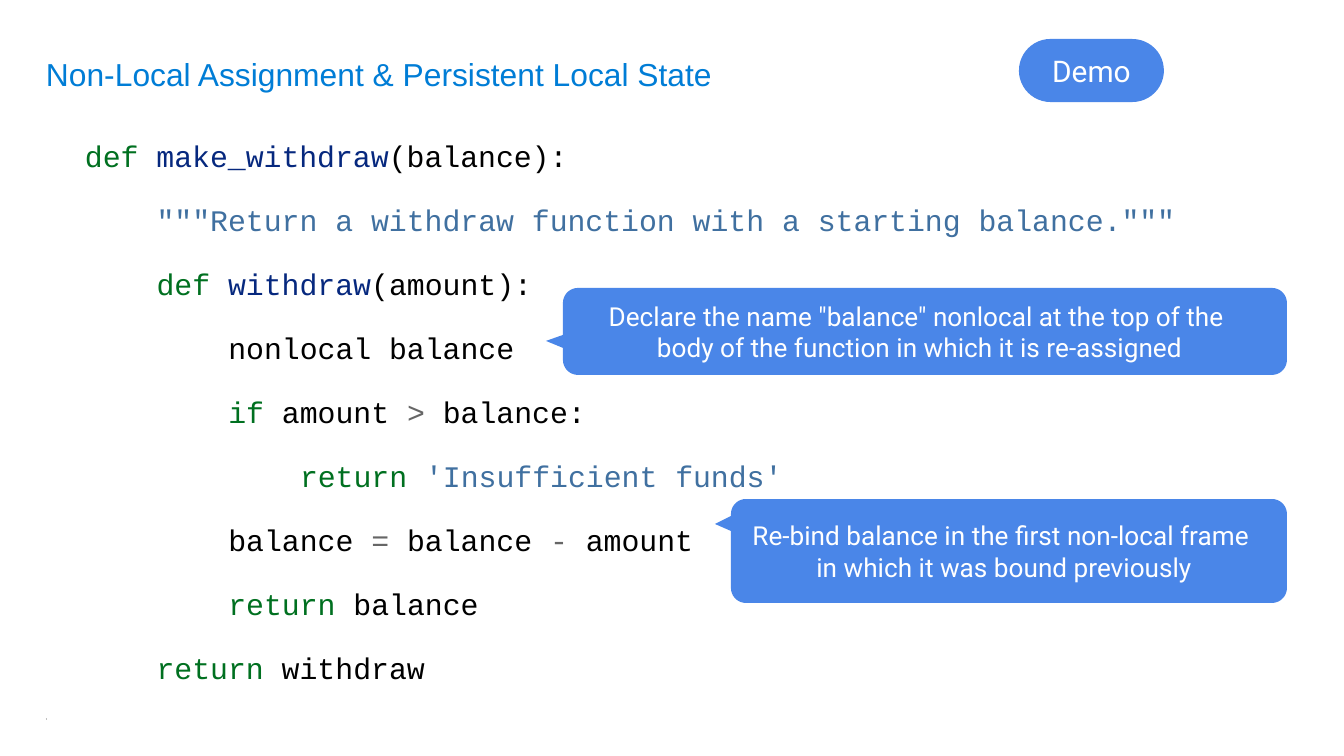
import math
import pptx
import pptx.util
import pptx.dml.color
import pptx.enum.dml
import pptx.enum.shapes
import pptx.enum.text
import pptx.oxml.ns
import lxml.etree

RGB = pptx.dml.color.RGBColor
KIND = pptx.enum.shapes.MSO_SHAPE
ANCHOR = pptx.enum.text.MSO_ANCHOR
CENTER = pptx.enum.text.PP_ALIGN.CENTER
Pt = pptx.util.Pt

# Colours
WHITE = RGB(0xFF, 0xFF, 0xFF)
BLUE = RGB(0x4A, 0x86, 0xE8)
TITLE = RGB(0x00, 0x7D, 0xD6)
GREY = RGB(0xB8, 0xB8, 0xB8)
PLAIN = RGB(0x00, 0x00, 0x00)
KEY = RGB(0x00, 0x70, 0x20)
NAME = RGB(0x06, 0x28, 0x7E)
QUOTE = RGB(0x40, 0x70, 0xA0)
SIGN = RGB(0x66, 0x66, 0x66)

# Content: each code line has an indent level and coloured parts
HEAD = "Non-Local Assignment & Persistent Local State"
CODE = [
    (0, [("def ", KEY), ("make_withdraw", NAME), ("(balance):", PLAIN)]),
    (1, [('"""Return a withdraw function with a starting balance."""', QUOTE)]),
    (1, [("def ", KEY), ("withdraw", NAME), ("(amount):", PLAIN)]),
    (2, [("nonlocal balance", PLAIN)]),
    (2, [("if", KEY), (" amount ", PLAIN), (">", SIGN), (" balance:", PLAIN)]),
    (3, [("return ", KEY), ("'Insufficient funds'", QUOTE)]),
    (2, [("balance ", PLAIN), ("=", SIGN), (" balance ", PLAIN),
         ("-", SIGN), (" amount", PLAIN)]),
    (2, [("return", KEY), (" balance", PLAIN)]),
    (1, [("return", KEY), (" withdraw", PLAIN)]),
]
# Callouts: box edges, wedge tip, wedge base, lines
NOTES = [
    ((563, 288, 1287, 375), (546, 341), (335, 348),
     ['Declare the name "balance" nonlocal at the top of the',
      " body of the function in which it is re-assigned"]),
    ((731, 499, 1287, 603), (715, 524), (516, 531),
     ["Re-bind balance in the first non-local frame",
      " in which it was bound previously"]),
]
RADIUS = 15
STEP = Pt(38.4)  # four characters of 16 pt code


def px(n):
    return pptx.util.Emu(round(n * 914400 / 134.4))


def paint(shape, color):
    shape.shadow.inherit = False
    shape.fill.solid()
    shape.fill.fore_color.rgb = color
    shape.line.fill.background()


def style(para, face, size, color=None):
    para.font.name = face
    para.font.size = Pt(size)
    if color is not None:
        para.font.color.rgb = color


def setup(frame, inset, anchor):
    frame.word_wrap = True
    frame.auto_size = pptx.enum.text.MSO_AUTO_SIZE.NONE
    frame.vertical_anchor = anchor
    frame.margin_left = frame.margin_right = px(inset)
    frame.margin_top = frame.margin_bottom = px(inset)


def write(frame, lines, size):
    for i, line in enumerate(lines):
        para = frame.paragraphs[0] if i == 0 else frame.add_paragraph()
        para.text = line
        para.alignment = CENTER
        style(para, "Roboto", size, WHITE)


def outline(box, tip, base):
    """Rounded box with a wedge on its left side."""
    left, top, right, bottom = box
    spots = [(left, base[0])]
    corners = [(left + RADIUS, top + RADIUS), (right - RADIUS, top + RADIUS),
               (right - RADIUS, bottom - RADIUS), (left + RADIUS, bottom - RADIUS)]
    for i, (x, y) in enumerate(corners):
        for turn in range(0, 91, 10):
            angle = math.radians(180 + 90 * i + turn)
            spots.append((x + RADIUS * math.cos(angle), y + RADIUS * math.sin(angle)))
    spots += [(left, base[1]), tip]
    return [(px(x), px(y)) for x, y in spots]


deck = pptx.Presentation()
deck.slide_width, deck.slide_height = px(1344), px(756)
slide = deck.slides.add_slide(deck.slide_layouts[5])
shapes = slide.shapes

# Footer rule
rule = shapes.add_connector(pptx.enum.shapes.MSO_CONNECTOR.STRAIGHT,
                            px(46), px(719), px(1300), px(719))
rule.line.color.rgb = GREY
rule.line.width = Pt(1)
rule.line.dash_style = pptx.enum.dml.MSO_LINE.DASH
lxml.etree.SubElement(rule._element.spPr, pptx.oxml.ns.qn("a:effectLst"))

# Title
title = shapes.title
title.left, title.top, title.width, title.height = px(46), px(0), px(1023), px(93)
setup(title.text_frame, 0, ANCHOR.BOTTOM)
title.text_frame.text = HEAD
para = title.text_frame.paragraphs[0]
para.alignment = pptx.enum.text.PP_ALIGN.LEFT
para.line_spacing = 0.9
style(para, "Arial", 17, TITLE)

# Code
frame = shapes.add_textbox(px(82), px(130), px(1253), px(458)).text_frame
setup(frame, 3, ANCHOR.TOP)
frame.margin_top = px(8)
for i, (level, parts) in enumerate(CODE):
    para = frame.paragraphs[0] if i == 0 else frame.add_paragraph()
    para.space_before = Pt(15.1 if i else 0)
    para._p.get_or_add_pPr().set("marL", str(level * STEP))
    style(para, "Courier New", 16)
    for text, color in parts:
        run = para.add_run()
        run.text = text
        run.font.color.rgb = color

# Callouts
for box, tip, base, lines in NOTES:
    spots = outline(box, tip, base)
    pen = shapes.build_freeform(*spots[0])
    pen.add_line_segments(spots[1:], close=True)
    note = pen.convert_to_shape()
    paint(note, BLUE)
    setup(note.text_frame, 3, ANCHOR.MIDDLE)
    write(note.text_frame, lines, 14)

# Footer cover
cover = shapes.add_shape(KIND.RECTANGLE, px(47), px(704), px(1277), px(42))
paint(cover, WHITE)

# Demo button
demo = shapes.add_shape(KIND.ROUNDED_RECTANGLE, px(1019), px(39), px(145), px(63))
demo.adjustments[0] = 0.5
paint(demo, BLUE)
setup(demo.text_frame, 13, ANCHOR.MIDDLE)
write(demo.text_frame, ["Demo"], 16)

deck.save("out.pptx")
